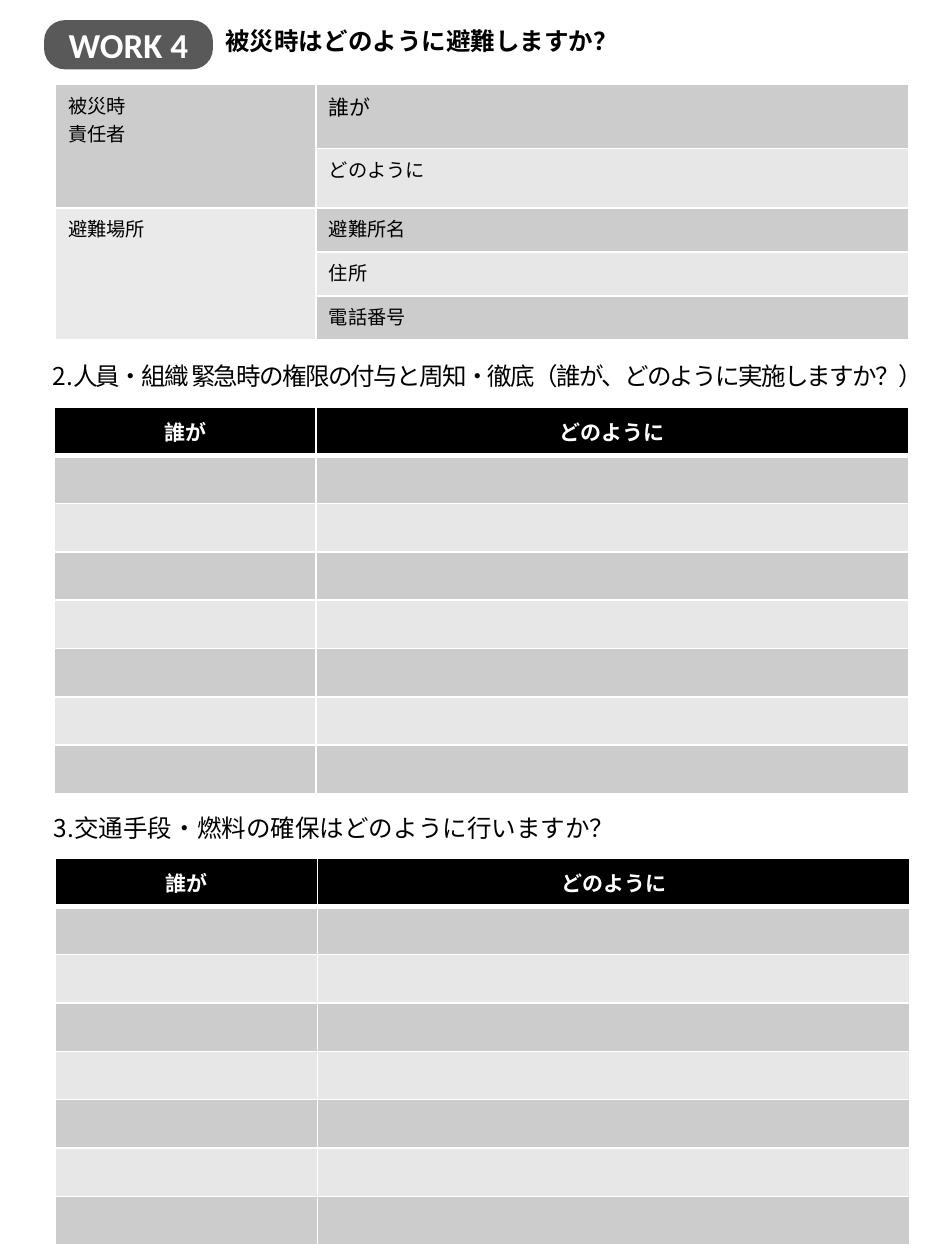
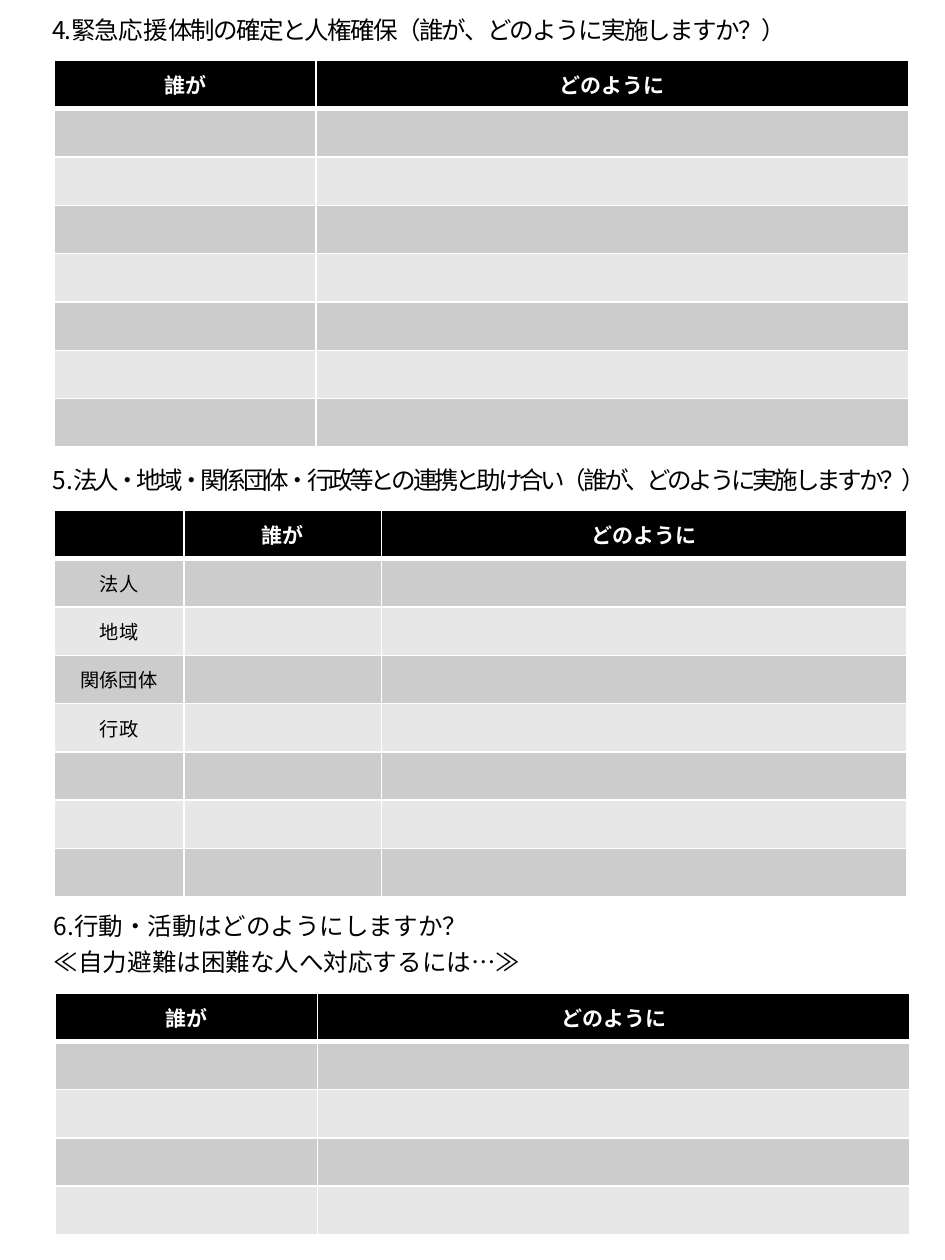
from lxml import etree
from pptx import Presentation
from pptx.dml.color import RGBColor
from pptx.enum import shapes, text
from pptx.oxml.ns import qn
from pptx.util import Inches, Pt

# Shared style
JAPANESE, LATIN = "Noto Sans CJK JP", "Calibri"
BLACK, WHITE, BADGE = "000000", "FFFFFF", "595959"
BANDS = ("CCCCCC", "E7E7E7")
PLACE_FILL = "EAEAEA"
HEADING_SIZE, HEADER_SIZE, BODY_SIZE = 14, 12, 11
HEADING_WIDTH, HEADING_HEIGHT, HEADING_STEP = 7.53, 0.34, 0.29
TABLE_INDENT, TABLE_DROP = 0.11, 0.41
ROW_HEIGHT = 3.07 / 8

# Content
WORK_LABEL = "WORK 4"
WORK_TITLE = "被災時はどのように避難しますか？"
# Each group: left label, fill, then (answer label, size, row height)
EVACUATION = [
    ("被災時\n責任者", BANDS[0], [("誰が", 12, 0.51), ("どのように", 11, 0.47)]),
    ("避難場所", PLACE_FILL,
     [("避難所名", 11, 0.35), ("住所", 11, 0.35), ("電話番号", 11, 0.35)]),
]
EVACUATION_COLUMNS = (2.07, 4.7)

WHO_HOW = [("誰が", 2.08), ("どのように", 4.7)]
PARTNER_WHO_HOW = [("", 1.03), ("誰が", 1.57), ("どのように", 4.17)]
PARTNERS = ["法人", "地域", "関係団体", "行政"]

# Each heading line is a list of (words, letter spacing in points)
SLIDE_SECTIONS = [
    [
        dict(left=0.32, top=2.82, columns=WHO_HOW, rows=7, headings=[
            [("2.", 0),
             ("人員・組織 緊急時の権限の付与と周知・徹底（誰が、どのように実施しますか？）", -1)]]),
        dict(left=0.33, top=6.4, columns=WHO_HOW, rows=7, headings=[
            [("3.交通手段・燃料の確保はどのように行いますか？", 0)]]),
    ],
    [
        dict(left=0.32, top=0.07, columns=WHO_HOW, rows=7, headings=[
            [("4.緊急", -1), ("応援", 0),
             ("体制の確定と人権確保（誰が、どのように実施しますか？）", -1)]]),
        dict(left=0.32, top=3.64, columns=PARTNER_WHO_HOW, rows=7, labels=PARTNERS, headings=[
            [("5.", 0),
             ("法人・地域・関係団体・行政等との連携と助け合い（誰が、どのように実施しますか？）", -1.9)]]),
        dict(left=0.33, top=7.18, columns=WHO_HOW, rows=4, headings=[
            [("6.行動・活動はどのようにしますか？", 0)],
            [("≪自力避難は困難な人へ対応するには…≫", 0)]]),
    ],
]


def color(value):
    return RGBColor.from_string(value)


def format_run(run, size, ink=BLACK, bold=False, font=JAPANESE, spacing=0):
    run.font.size = Pt(size)
    run.font.bold = bold
    run.font.color.rgb = color(ink)
    run.font.name = font
    properties = run.font._element
    etree.SubElement(properties, qn("a:ea"), typeface=font)
    if spacing:
        properties.set("spc", str(round(spacing * 100)))


def add_heading(slide, left, top, pieces, width=HEADING_WIDTH, bold=False):
    box = slide.shapes.add_textbox(
        Inches(left), Inches(top), Inches(width), Inches(HEADING_HEIGHT))
    box.text_frame.word_wrap = True
    paragraph = box.text_frame.paragraphs[0]
    for words, spacing in pieces:
        run = paragraph.add_run()
        run.text = words
        format_run(run, HEADING_SIZE, bold=bold, spacing=spacing)


def style_cell(cell, fill, words="", size=BODY_SIZE, ink=BLACK, bold=False,
               centered=False, top=1, bottom=1):
    # Borders come before the fill in the cell properties
    properties = cell._tc.get_or_add_tcPr()
    for side, width in (("L", 1), ("R", 1), ("T", top), ("B", bottom)):
        line = etree.SubElement(properties, qn(f"a:ln{side}"), w=str(Pt(width)))
        paint = etree.SubElement(line, qn("a:solidFill"))
        etree.SubElement(paint, qn("a:srgbClr"), val=WHITE)
    cell.fill.solid()
    cell.fill.fore_color.rgb = color(fill)
    if centered:
        cell.vertical_anchor = text.MSO_ANCHOR.MIDDLE
    if not words:
        # Keeps blank rows from growing to the default text size
        etree.SubElement(cell.text_frame.paragraphs[0]._p,
                         qn("a:endParaRPr"), sz=str(size * 100))
        return
    cell.text_frame.text = words
    for paragraph in cell.text_frame.paragraphs:
        if centered:
            paragraph.alignment = text.PP_ALIGN.CENTER
        for run in paragraph.runs:
            format_run(run, size, ink, bold)


def add_grid(slide, left, top, widths, heights, header):
    table = slide.shapes.add_table(
        len(heights), len(widths), Inches(left), Inches(top),
        Inches(sum(widths)), Inches(sum(heights))).table
    table.first_row = header
    table.horz_banding = False
    for column, width in zip(table.columns, widths):
        column.width = Inches(width)
    for row, height in zip(table.rows, heights):
        row.height = Inches(height)
    return table


def add_section(slide, left, top, columns, rows, headings, labels=()):
    for line, pieces in enumerate(headings):
        add_heading(slide, left, top + line * HEADING_STEP, pieces)
    table_top = top + (len(headings) - 1) * HEADING_STEP + TABLE_DROP
    table = add_grid(slide, left + TABLE_INDENT, table_top,
                     [width for _, width in columns], [ROW_HEIGHT] * (rows + 1), True)
    for c, (title, _) in enumerate(columns):
        style_cell(table.cell(0, c), BLACK, title, HEADER_SIZE, WHITE,
                   bold=True, centered=True, bottom=3)
        for r in range(rows):
            label = labels[r] if c == 0 and r < len(labels) else ""
            style_cell(table.cell(r + 1, c), BANDS[r % 2], label,
                       centered=True, top=3 if r == 0 else 1)


def add_work_header(slide):
    badge = slide.shapes.add_shape(
        shapes.MSO_SHAPE.ROUNDED_RECTANGLE,
        Inches(0.35), Inches(0.16), Inches(1.34), Inches(0.39))
    badge.adjustments[0] = 0.42
    badge.shadow.inherit = False
    badge.fill.solid()
    badge.fill.fore_color.rgb = color(BADGE)
    badge.line.fill.background()
    badge.text_frame.text = WORK_LABEL
    badge.text_frame.vertical_anchor = text.MSO_ANCHOR.MIDDLE
    label = badge.text_frame.paragraphs[0]
    label.alignment = text.PP_ALIGN.CENTER
    format_run(label.runs[0], 20, WHITE, True, LATIN)
    add_heading(slide, 1.69, 0.16, [(WORK_TITLE, 0)], width=6.03, bold=True)


def add_evacuation_table(slide):
    heights = [height for _, _, answers in EVACUATION for _, _, height in answers]
    table = add_grid(slide, 0.44, 0.67, EVACUATION_COLUMNS, heights, False)
    row = 0
    for label, fill, answers in EVACUATION:
        first = row
        for answer, size, _ in answers:
            style_cell(table.cell(row, 0), fill, label if row == first else "")
            style_cell(table.cell(row, 1), BANDS[row % 2], answer, size)
            row += 1
        table.cell(first, 0).merge(table.cell(row - 1, 0))


def main():
    deck = Presentation()
    deck.slide_width, deck.slide_height = Inches(7.5), Inches(10)
    for number, sections in enumerate(SLIDE_SECTIONS):
        slide = deck.slides.add_slide(deck.slide_layouts[6])
        if number == 0:
            add_work_header(slide)
            add_evacuation_table(slide)
        for section in sections:
            add_section(slide, **section)
    deck.save("out.pptx")


if __name__ == "__main__":
    main()
